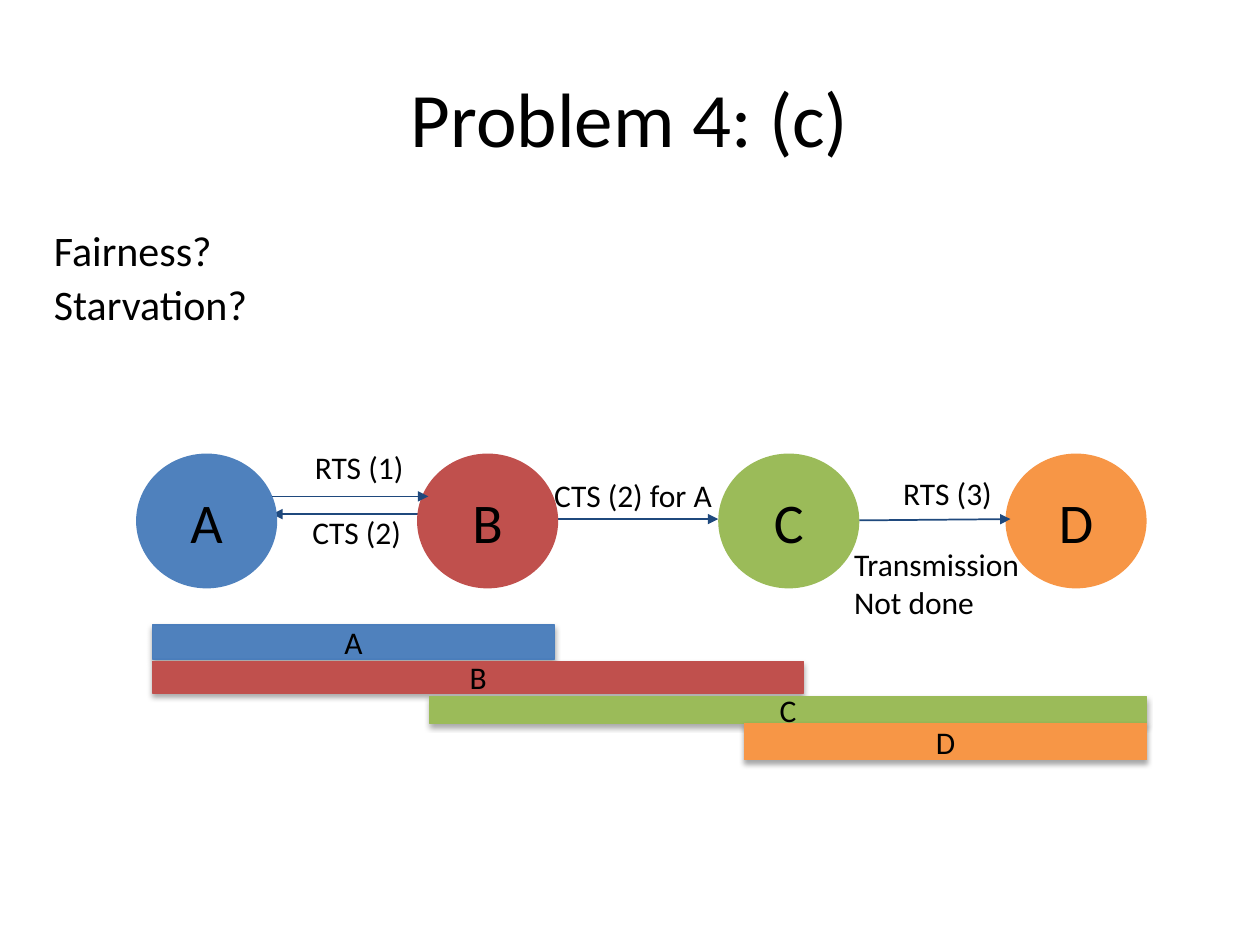
import pptx
import pptx.util
import pptx.dml.color
import pptx.enum.shapes
import pptx.enum.text
import pptx.oxml
import pptx.oxml.ns
from pptx.util import Inches

COLORS = {
    "text": "000000",
    "arrow": "1F497D",
    "A": "4F81BD",
    "B": "C0504D",
    "C": "9BBB59",
    "D": "F79646",
    "A edge": "4B7EBC",
}


def rgb(name):
    return pptx.dml.color.RGBColor.from_string(COLORS[name])


class SlideBuilder:
    """Holds the text style and the slide being drawn."""

    font = "Calibri"

    def __init__(self, slide):
        self.slide = slide

    def set_text(self, frame, text, size, align=None):
        frame.text = text
        for paragraph in frame.paragraphs:
            paragraph.alignment = align
            for run in paragraph.runs:
                run.font.name = self.font
                run.font.size = pptx.util.Pt(size)
                run.font.color.rgb = rgb("text")

    def title(self, text, left, top, width, height):
        title = self.slide.shapes.title
        title.left, title.top = Inches(left), Inches(top)
        title.width, title.height = Inches(width), Inches(height)
        title.text_frame.vertical_anchor = pptx.enum.text.MSO_ANCHOR.MIDDLE
        self.set_text(title.text_frame, text, 44, pptx.enum.text.PP_ALIGN.CENTER)

    def text_box(self, text, left, top, width, height, size):
        box = self.slide.shapes.add_textbox(
            Inches(left), Inches(top), Inches(width), Inches(height))
        self.set_text(box.text_frame, text, size)
        return box.text_frame

    def questions(self, text, left, top, width, height):
        frame = self.text_box(text, left, top, width, height, 24)
        frame.word_wrap = True
        for paragraph in frame.paragraphs:
            paragraph.line_spacing = 0.9
            paragraph.space_before = pptx.util.Pt(4.8)

    def label(self, text, left, top, width, height=0.4):
        frame = self.text_box(text, left, top, width, height, 18)
        frame.word_wrap = False
        frame.auto_size = pptx.enum.text.MSO_AUTO_SIZE.SHAPE_TO_FIT_TEXT

    def filled(self, kind, name, left, top, width, height, size):
        shape = self.slide.shapes.add_shape(
            kind, Inches(left), Inches(top), Inches(width), Inches(height))
        shape.fill.solid()
        shape.fill.fore_color.rgb = rgb(name)
        shape.text_frame.vertical_anchor = pptx.enum.text.MSO_ANCHOR.MIDDLE
        self.set_text(shape.text_frame, name, size, pptx.enum.text.PP_ALIGN.CENTER)
        return shape

    def station(self, name, left):
        circle = self.filled(pptx.enum.shapes.MSO_SHAPE.OVAL,
                             name, left, 3.6, 1.12, 1.07, 32)
        circle.shadow.inherit = False
        circle.line.fill.background()
        circle.text_frame.word_wrap = False

    def range_bar(self, name, left, top, width, height, edge=None):
        """Draw a radio range; it keeps the soft shadow of the theme."""
        bar = self.filled(pptx.enum.shapes.MSO_SHAPE.RECTANGLE,
                          name, left, top, width, height, 18)
        bar.line.color.rgb = rgb(edge or name)
        bar.line.width = pptx.util.Pt(0.75)

    def arrow(self, x1, y1, x2, y2):
        connector = self.slide.shapes.add_connector(
            pptx.enum.shapes.MSO_CONNECTOR.STRAIGHT,
            Inches(x1), Inches(y1), Inches(x2), Inches(y2))
        connector.line.color.rgb = rgb("arrow")
        connector.line.width = pptx.util.Pt(1)
        namespace = pptx.oxml.ns.nsdecls("a")
        properties = connector.element.spPr
        properties.find(pptx.oxml.ns.qn("a:ln")).append(
            pptx.oxml.parse_xml(f'<a:tailEnd {namespace} type="triangle"/>'))
        properties.append(pptx.oxml.parse_xml(f"<a:effectLst {namespace}/>"))


def main():
    deck = pptx.Presentation()
    deck.slide_width, deck.slide_height = Inches(10), Inches(7.5)
    builder = SlideBuilder(deck.slides.add_slide(deck.slide_layouts[5]))

    builder.title("Problem 4: (c)", 0.5, 0.3, 9, 1.25)
    builder.questions("Fairness?\nStarvation?", 0.33, 1.78, 9.17, 4.97)

    builder.arrow(3.4, 4.08, 2.16, 4.08)
    builder.label("RTS (1)", 2.4, 3.51, 0.92)
    builder.label("CTS (2)", 2.38, 4.02, 0.91)
    builder.label("CTS (2) for A", 4.3, 3.73, 1.47)
    builder.arrow(4.43, 4.12, 5.7, 4.12)
    builder.label("RTS (3)", 7.07, 3.71, 0.92)

    for name, left in (("A", 1.08), ("B", 3.31), ("C", 5.7), ("D", 7.98)):
        builder.station(name, left)

    builder.range_bar("A", 1.21, 4.96, 3.19, 0.27, edge="A edge")
    builder.range_bar("B", 1.21, 5.25, 5.17, 0.25)
    builder.range_bar("C", 3.41, 5.53, 5.69, 0.21)
    builder.label("Transmission\nNot done", 6.68, 4.28, 1.55, 0.71)
    builder.range_bar("D", 5.91, 5.74, 3.19, 0.29)

    builder.arrow(2.16, 3.94, 3.4, 3.94)
    builder.arrow(6.82, 4.13, 8.02, 4.12)

    deck.save("out.pptx")


if __name__ == "__main__":
    main()
